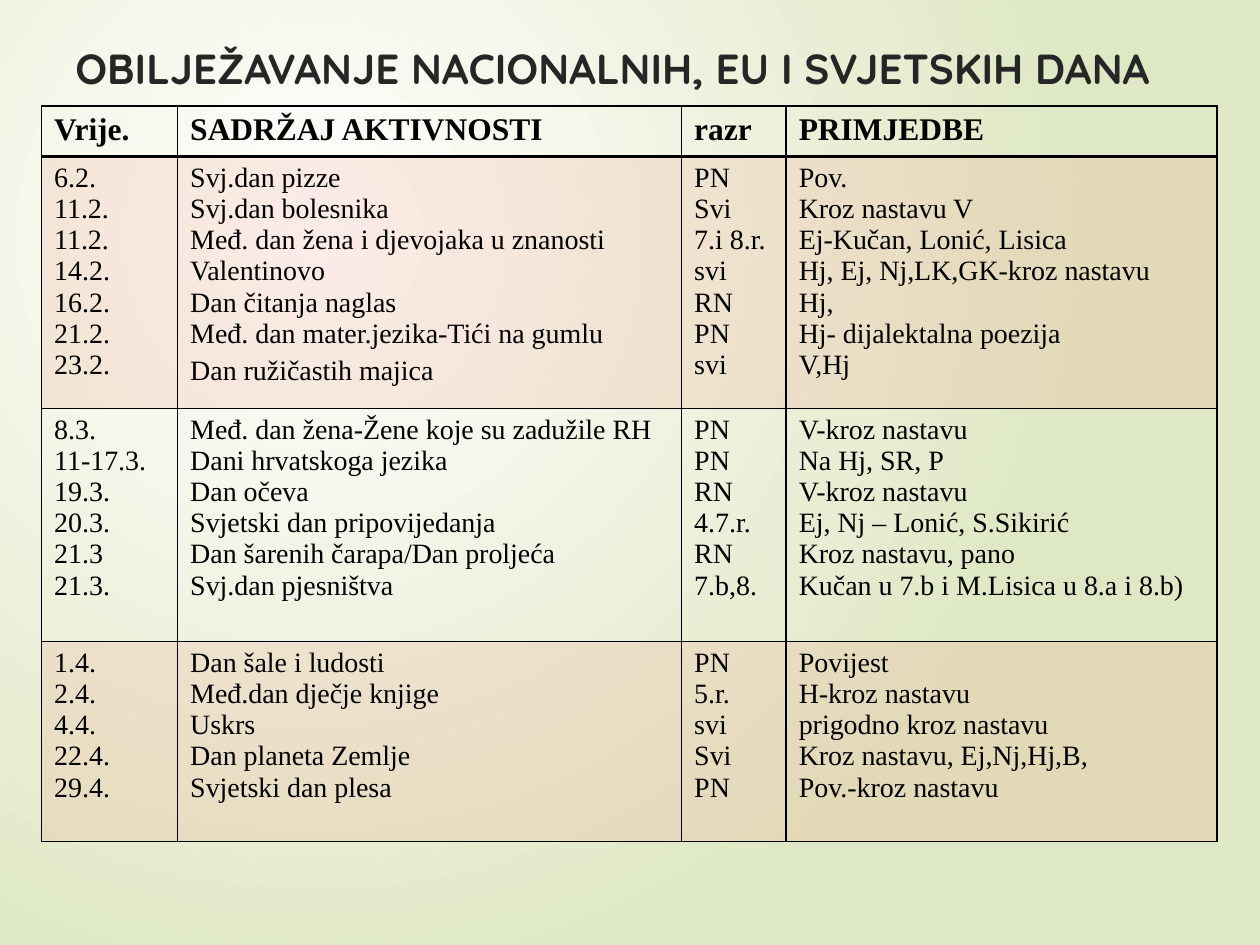
from lxml import etree
from pptx import Presentation
from pptx.dml.color import RGBColor
from pptx.enum.text import MSO_ANCHOR
from pptx.oxml import parse_xml
from pptx.oxml.ns import nsdecls, qn
from pptx.util import Inches, Pt

MIDDLE = MSO_ANCHOR.MIDDLE
SERIF = "Times New Roman"
ROUND = "Quicksand"
BLACK = "000000"
PEACH = "F39E87"
COLS = [1.08, 4, 0.83, 3.42]
HEIGHTS = [0.39, 1.89, 1.85, 1.59]
HEADS = ["Vrije.", "SADRŽAJ AKTIVNOSTI", "razr", "PRIMJEDBE"]
MONTHS = [
    [
        ("6.2.", "Svj.dan pizze", "PN", "Pov."),
        ("11.2.", "Svj.dan bolesnika", "Svi", "Kroz nastavu V"),
        ("11.2.", "Međ. dan žena i djevojaka u znanosti", "7.i 8.r.", "Ej-Kučan, Lonić, Lisica"),
        ("14.2.", "Valentinovo", "svi", "Hj, Ej, Nj,LK,GK-kroz nastavu"),
        ("16.2.", "Dan čitanja naglas", "RN", "Hj,"),
        ("21.2.", "Međ. dan mater.jezika-Tići na gumlu", "PN", "Hj- dijalektalna poezija"),
        ("23.2.", "Dan ružičastih majica", "svi", "V,Hj"),
    ],
    [
        ("8.3.", "Međ. dan žena-Žene koje su zadužile RH", "PN", "V-kroz nastavu"),
        ("11-17.3.", "Dani hrvatskoga jezika", "PN", "Na Hj, SR, P"),
        ("19.3.", "Dan očeva", "RN", "V-kroz nastavu"),
        ("20.3.", "Svjetski dan pripovijedanja", "4.7.r.", "Ej, Nj – Lonić, S.Sikirić"),
        ("21.3", "Dan šarenih čarapa/Dan proljeća", "RN", "Kroz nastavu, pano"),
        ("21.3.", "Svj.dan pjesništva", "7.b,8.", "Kučan u 7.b i M.Lisica u 8.a i 8.b)"),
    ],
    [
        ("1.4.", "Dan šale i ludosti", "PN", "Povijest"),
        ("2.4.", "Međ.dan dječje knjige", "5.r.", "H-kroz nastavu"),
        ("4.4.", "Uskrs", "svi", "prigodno kroz nastavu"),
        ("22.4.", "Dan planeta Zemlje", "Svi", "Kroz nastavu, Ej,Nj,Hj,B,"),
        ("29.4.", "Svjetski dan plesa", "PN", "Pov.-kroz nastavu"),
    ],
]


def rgb(code):
    return RGBColor.from_string(code)


def add_run(para, text, size=16, font=SERIF, color=BLACK, bold=False):
    run = para.add_run()
    run.text = text
    run.font.size = Pt(size)
    run.font.name = font
    run.font.bold = bold
    run.font.color.rgb = rgb(color)


def add_lines(frame, lines, **style):
    for i, line in enumerate(lines):
        para = frame.add_paragraph() if i else frame.paragraphs[0]
        add_run(para, line, **style)


def set_back(slide):
    slide.element.cSld.insert(0, parse_xml(
        f'<p:bg {nsdecls("p", "a")}><p:bgPr><a:gradFill rotWithShape="1"><a:gsLst>'
        '<a:gs pos="0"><a:srgbClr val="FFFFFF"/></a:gs>'
        '<a:gs pos="100000"><a:srgbClr val="DFE8C4"/></a:gs></a:gsLst>'
        '<a:path path="circle"><a:fillToRect l="50000" t="50000" r="100000" b="100000"/>'
        '</a:path></a:gradFill><a:effectLst/></p:bgPr></p:bg>'))


def set_edges(cell, widths):
    props = cell._tc.get_or_add_tcPr()
    for i, (side, width) in enumerate(widths.items()):
        props.insert(i, parse_xml(
            f'<a:ln{side} {nsdecls("a")} w="{Pt(width)}"><a:solidFill>'
            f'<a:srgbClr val="{BLACK}"/></a:solidFill></a:ln{side}>'))


def set_fill(cell, tinted):
    if not tinted:
        cell.fill.background()
        return
    cell.fill.solid()
    cell.fill.fore_color.rgb = rgb(PEACH)
    tint = cell._tc.tcPr.find(qn("a:solidFill")).find(qn("a:srgbClr"))
    etree.SubElement(tint, qn("a:alpha")).set("val", "20000")


def add_title(slide, text):
    box = slide.shapes.add_textbox(Inches(0.5), Inches(0.25), Inches(9), Inches(0.58))
    frame = box.text_frame
    frame.word_wrap = True
    frame.vertical_anchor = MIDDLE
    add_lines(frame, [text], size=24, font=ROUND, color="262626", bold=True)


def add_plan(slide):
    table = slide.shapes.add_table(
        len(HEIGHTS), len(COLS), Inches(0.33), Inches(0.84),
        Inches(sum(COLS)), Inches(sum(HEIGHTS))).table
    for col, width in zip(table.columns, COLS):
        col.width = Inches(width)
    for row, height in zip(table.rows, HEIGHTS):
        row.height = Inches(height)
    for r, rows in enumerate([[HEADS]] + MONTHS):
        style = {"bold": r == 0, "size": 16 if r else 18}
        for c, lines in enumerate(zip(*rows)):
            cell = table.cell(r, c)
            add_lines(cell.text_frame, lines, **style)
            set_fill(cell, r % 2 == 1)
            set_edges(cell, {"L": 1, "R": 1, "T": 2 if r == 1 else 1, "B": 1 if r else 2})
    add_run(table.cell(1, 1).text_frame.paragraphs[-1], " ", size=18, font=ROUND)


def main():
    deck = Presentation()
    deck.slide_width = Inches(10)
    deck.slide_height = Inches(7.5)
    slide = deck.slides.add_slide(deck.slide_layouts[6])
    set_back(slide)
    add_title(slide, "OBILJEŽAVANJE NACIONALNIH, EU I SVJETSKIH DANA")
    add_plan(slide)
    deck.save("out.pptx")


if __name__ == "__main__":
    main()
